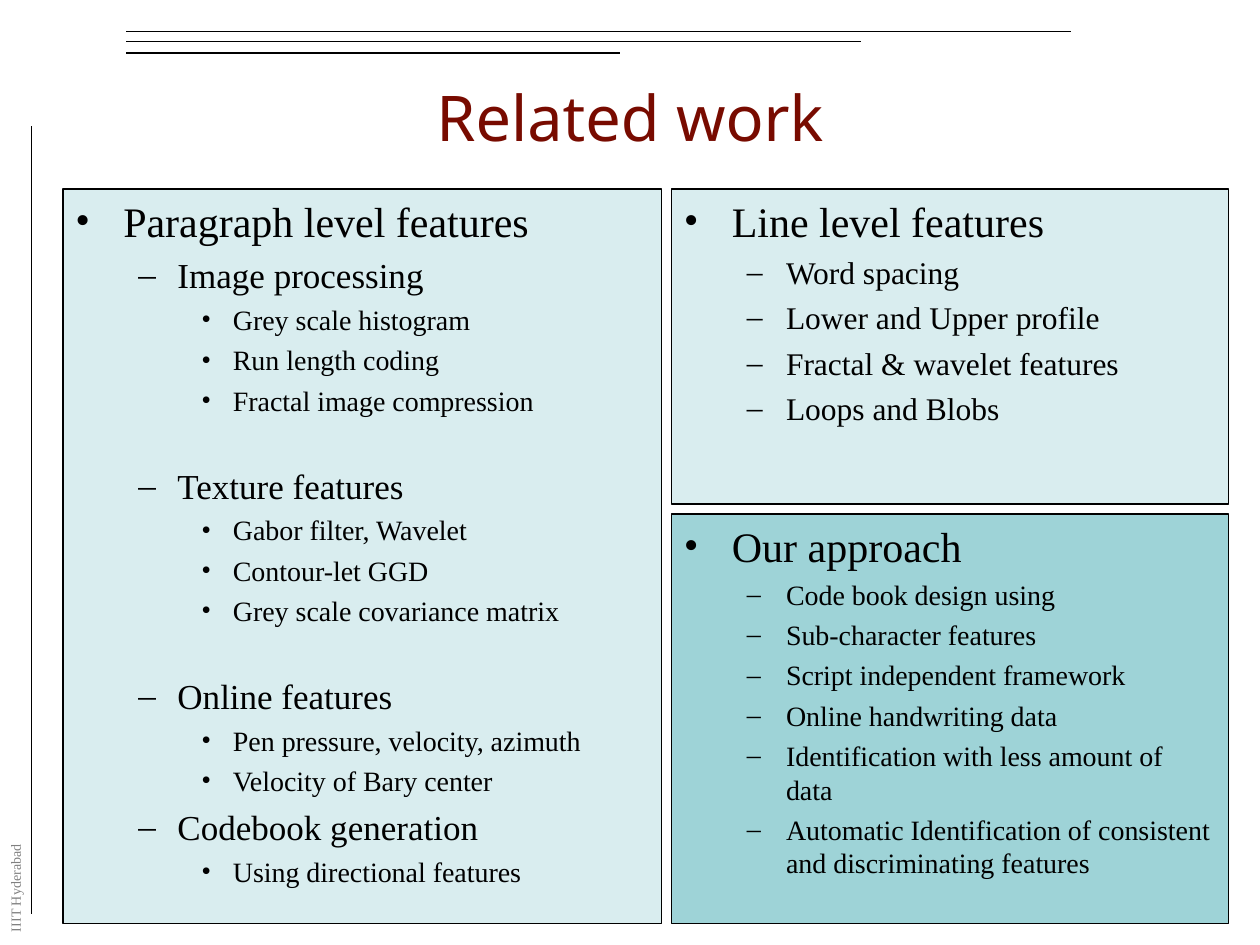
from dataclasses import dataclass

from lxml import etree
from pptx import Presentation
from pptx.dml.color import RGBColor
from pptx.enum import shapes, text
from pptx.oxml import ns
from pptx.util import Inches, Pt

SERIF = "Times New Roman"
BLACK, GREY, MAROON = "000000", "808080", "780B00"
PALE_TEAL, TEAL = "D9EDEF", "9ED3D7"
SPACING = 0.24  # space before a paragraph, as a share of its text size
GROUP_GAP = 22.3  # extra points above a new group of features


@dataclass
class Level:
    indent: float
    hanging: float
    bullet: str


@dataclass
class Item:
    level: int
    size: float
    words: str
    gap: float = 0


@dataclass
class Panel:
    left: float
    top: float
    width: float
    height: float
    fill: str
    items: list[Item]


@dataclass
class Rule:
    x1: float
    y1: float
    x2: float
    y2: float


LEVELS = [Level(0.38, 0.38, "•"), Level(0.81, 0.31, "–"), Level(1.25, 0.25, "•")]

RULES = [
    Rule(1, 0.25, 8.5, 0.25),
    Rule(1, 0.33, 6.83, 0.33),
    Rule(1, 0.42, 4.92, 0.42),
    Rule(0.25, 1, 0.25, 7.25),
]


def listing(heading: str, size: float, entries: list[str]) -> list[Item]:
    """A heading with one level of entries below it."""
    return [Item(0, 24, heading)] + [Item(1, size, entry) for entry in entries]


def group(heading: str, entries: list[str], gap: float = 0) -> list[Item]:
    """A second-level heading with third-level entries below it."""
    return [Item(1, 20, heading, gap)] + [Item(2, 16, entry) for entry in entries]


PANELS = [
    Panel(5.33, 1.5, 4.42, 2.5, PALE_TEAL, listing("Line level features", 18, [
        "Word spacing",
        "Lower and Upper profile",
        "Fractal & wavelet features",
        "Loops and Blobs",
    ])),
    Panel(0.5, 1.5, 4.75, 5.83, PALE_TEAL, [
        Item(0, 24, "Paragraph level features"),
        *group("Image processing", [
            "Grey scale histogram", "Run length coding", "Fractal image compression"]),
        *group("Texture features", [
            "Gabor filter, Wavelet", "Contour-let GGD", "Grey scale covariance matrix"],
            GROUP_GAP),
        *group("Online features", [
            "Pen pressure, velocity, azimuth", "Velocity of Bary center"], GROUP_GAP),
        *group("Codebook generation", ["Using directional features"]),
    ]),
    Panel(5.33, 4.08, 4.42, 3.25, TEAL, listing("Our approach", 16, [
        "Code book design using",
        "Sub-character features",
        "Script independent framework",
        "Online handwriting data",
        "Identification with less amount of data",
        "Automatic Identification of consistent and discriminating features",
    ])),
]


def colour(code: str) -> RGBColor:
    return RGBColor.from_string(code)


def add_span(para, words: str, size: float, font: str, code: str) -> None:
    span = para.add_run()
    span.text = words
    span.font.size = Pt(size)
    span.font.name = font
    span.font.color.rgb = colour(code)


def add_rule(page, rule: Rule) -> None:
    line = page.shapes.add_connector(
        shapes.MSO_CONNECTOR.STRAIGHT,
        Inches(rule.x1), Inches(rule.y1), Inches(rule.x2), Inches(rule.y2))
    line.line.color.rgb = colour(BLACK)
    line.line.width = Pt(0.75)
    etree.SubElement(line._element.spPr, ns.qn("a:effectLst"))


def add_label(page, left: float, top: float, width: float, height: float):
    box = page.shapes.add_textbox(
        Inches(left), Inches(top), Inches(width), Inches(height))
    box.text_frame.word_wrap = True
    return box


def set_bullet(para, level: Level) -> None:
    props = para._p.get_or_add_pPr()
    props.set("marL", str(Inches(level.indent)))
    props.set("indent", str(-Inches(level.hanging)))
    etree.SubElement(props, ns.qn("a:buFont"), typeface=SERIF)
    etree.SubElement(props, ns.qn("a:buChar"), char=level.bullet)


def add_panel(page, panel: Panel) -> None:
    box = page.shapes.add_shape(
        shapes.MSO_SHAPE.RECTANGLE, Inches(panel.left), Inches(panel.top),
        Inches(panel.width), Inches(panel.height))
    box.shadow.inherit = False
    box.fill.solid()
    box.fill.fore_color.rgb = colour(panel.fill)
    box.line.color.rgb = colour(BLACK)
    box.line.width = Pt(0.75)
    frame = box.text_frame
    frame.word_wrap = True
    frame.vertical_anchor = text.MSO_ANCHOR.TOP
    for number, item in enumerate(panel.items):
        para = frame.add_paragraph() if number else frame.paragraphs[0]
        set_bullet(para, LEVELS[item.level])
        para.level = item.level
        para.alignment = text.PP_ALIGN.LEFT
        if number:
            para.space_before = Pt(item.size * SPACING + item.gap)
        add_span(para, item.words, item.size, SERIF, BLACK)


def main() -> None:
    deck = Presentation()
    deck.slide_width, deck.slide_height = Inches(10), Inches(7.5)
    page = deck.slides.add_slide(deck.slide_layouts[6])

    # Frame rules
    for rule in RULES:
        add_rule(page, rule)

    # Institute name up the left edge
    institute = add_label(page, -0.34, 6.92, 0.92, 0.23)
    institute.rotation = 270
    add_span(institute.text_frame.paragraphs[0], "IIIT Hyderabad", 8, SERIF, GREY)

    # Title
    title = add_label(page, 0.5, 0.3, 9, 1.25)
    title.text_frame.vertical_anchor = text.MSO_ANCHOR.MIDDLE
    heading = title.text_frame.paragraphs[0]
    heading.alignment = text.PP_ALIGN.CENTER
    add_span(heading, "Related work", 36, "Noto Sans", MAROON)

    # Feature panels
    for panel in PANELS:
        add_panel(page, panel)

    deck.save("out.pptx")


if __name__ == "__main__":
    main()
